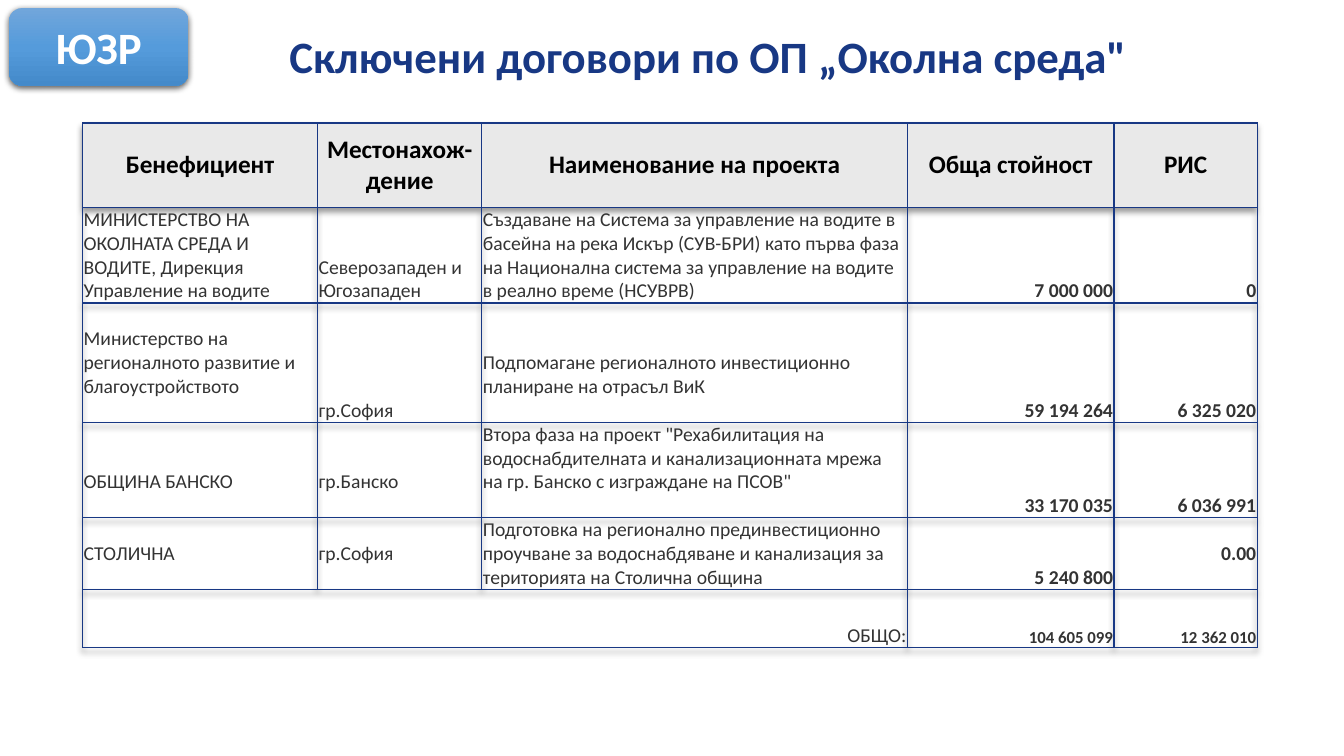
from copy import deepcopy
from lxml import etree
from pptx import Presentation, util as u
from pptx.dml.color import RGBColor
from pptx.enum import shapes, text
from pptx.oxml import parse_xml
from pptx.oxml.ns import nsdecls, qn

NAVY = RGBColor(0x18, 0x38, 0x84)
WHITE = RGBColor(0xFF, 0xFF, 0xFF)
BLACK = RGBColor(0, 0, 0)
GRAPHITE = RGBColor(0x33, 0x33, 0x33)
SILVER = RGBColor(0xE9, 0xE9, 0xE9)
BADGE_BLUES = [(0, RGBColor(0x71, 0xA6, 0xDB)), (0.5, RGBColor(0x55, 0x9B, 0xDB)),
               (1, RGBColor(0x44, 0x8A, 0xCA))]
LEFT, CENTER, RIGHT = text.PP_ALIGN.LEFT, text.PP_ALIGN.CENTER, text.PP_ALIGN.RIGHT
MIDDLE, BOTTOM = text.MSO_ANCHOR.MIDDLE, text.MSO_ANCHOR.BOTTOM


def write(frame, wording, size=14, color=GRAPHITE, bold=False, align=LEFT):
    frame.word_wrap = True
    frame.text = wording
    for line in frame.paragraphs:
        line.alignment = align
        line.font.name = "Calibri"
        for run in line.runs:
            run.font.name = "Calibri"
            run.font.size = u.Pt(size)
            run.font.bold = bold
            run.font.color.rgb = color


def shadow(blur, distance, alpha):
    return parse_xml(
        f'<a:effectLst {nsdecls("a")}><a:outerShdw blurRad="{u.Pt(blur)}" dist="{u.Pt(distance)}" '
        f'dir="5400000" algn="t" rotWithShape="0"><a:srgbClr val="000000">'
        f'<a:alpha val="{alpha * 1000}"/></a:srgbClr></a:outerShdw></a:effectLst>')


deck = Presentation()
deck.slide_width, deck.slide_height = u.Inches(13.33), u.Inches(7.5)
COL, ROW = deck.slide_width / 100, deck.slide_height / 100
slide = deck.slides.add_slide(deck.slide_layouts[5])

heading = slide.shapes.title
heading.left, heading.top = int(14.25 * COL), int(3.07 * ROW)
heading.width, heading.height = int(76.9 * COL), int(8.53 * ROW)
heading.text_frame.vertical_anchor = MIDDLE
write(heading.text_frame, 'Сключени договори по ОП „Околна среда"', 32, NAVY, True, CENTER)

COLUMN_SHARES = [17.48, 12.23, 31.66, 15.38, 10.65]
ROW_SHARES = [11.2, 12.6, 15.8, 12.6, 9.5, 7.7]
CONTRACTS = [
    ["Бенефициент", "Местонахож-дение", "Наименование на проекта", "Обща стойност", "РИС"],
    ["МИНИСТЕРСТВО НА ОКОЛНАТА СРЕДА И ВОДИТЕ, Дирекция Управление на водите",
     "Северозападен и\nЮгозападен",
     "Създаване на Система за управление на водите в басейна на река Искър (СУВ-БРИ) като първа "
     "фаза на Национална система за управление на водите в реално време (НСУВРВ)",
     "7 000 000", "0"],
    ["Министерство на регионалното развитие и благоустройството", "гр.София",
     "Подпомагане регионалното инвестиционно планиране на отрасъл ВиК",
     "59 194 264", "6 325 020"],
    ["ОБЩИНА БАНСКО", "гр.Банско",
     'Втора фаза на проект "Рехабилитация на водоснабдителната и канализационната мрежа '
     'на гр. Банско с изграждане на ПСОВ"',
     "33 170 035", "6 036 991"],
    ["СТОЛИЧНА", "гр.София",
     "Подготовка на регионално прединвестиционно проучване за водоснабдяване и канализация "
     "за територията на Столична община",
     "5 240 800", "0.00"],
    ["ОБЩО:", "", "", "104 605 099", "12 362 010"],
]
RAISED = {(2, 0), (2, 2), (3, 0), (3, 1), (3, 2), (4, 0), (4, 1), (4, 4)}
TOTAL = len(CONTRACTS) - 1

contracts = slide.shapes.add_table(
    len(ROW_SHARES), len(COLUMN_SHARES), int(6.15 * COL), int(16.27 * ROW),
    int(sum(COLUMN_SHARES) * COL), int(sum(ROW_SHARES) * ROW)).table
contracts.horz_banding = False
contracts._tbl.tblPr.insert(0, shadow(4, 3, 40))
for column, share in zip(contracts.columns, COLUMN_SHARES):
    column.width = int(share * COL)
for row, share in zip(contracts.rows, ROW_SHARES):
    row.height = int(share * ROW)
contracts.cell(TOTAL, 0).merge(contracts.cell(TOTAL, 2))

for r, entries in enumerate(CONTRACTS):
    for c, entry in enumerate(entries):
        cell = contracts.cell(r, c)
        cell.margin_left = cell.margin_right = u.Inches(0.01)
        cell.margin_top = 0
        cell.margin_bottom = int(3.15 * ROW) if (r, c) in RAISED else 0
        properties = cell._tc.get_or_add_tcPr()
        for side in ("lnL", "lnR", "lnT", "lnB"):
            border = etree.SubElement(properties, qn(f"a:{side}"), w=str(u.Pt(1)))
            ink = etree.SubElement(border, qn("a:solidFill"))
            etree.SubElement(ink, qn("a:srgbClr"), val=str(NAVY))
        if r == 0:
            cell.fill.solid()
            cell.fill.fore_color.rgb = SILVER
            cell.vertical_anchor = MIDDLE
            write(cell.text_frame, entry, 18, BLACK, True, CENTER)
        else:
            cell.fill.background()
            cell.vertical_anchor = BOTTOM
            amount = c > 2
            write(cell.text_frame, entry, 12 if amount and r == TOTAL else 14, bold=amount,
                  align=RIGHT if amount or r == TOTAL else LEFT)

region = slide.shapes.add_shape(
    shapes.MSO_SHAPE.ROUNDED_RECTANGLE,
    int(0.68 * COL), int(1.07 * ROW), int(13.35 * COL), int(10.27 * ROW))
region.line.fill.background()
region.fill.gradient()
region.fill.gradient_angle = 270
stops = region._element.spPr.find(".//" + qn("a:gsLst"))
stops.append(deepcopy(stops[-1]))
for stop, (position, blue) in zip(region.fill.gradient_stops, BADGE_BLUES):
    stop.position = position
    stop.color.rgb = blue
region._element.spPr.append(shadow(4.5, 1.5, 63))
region.text_frame.vertical_anchor = MIDDLE
write(region.text_frame, "ЮЗР", 32, WHITE, True, CENTER)

deck.save("out.pptx")
